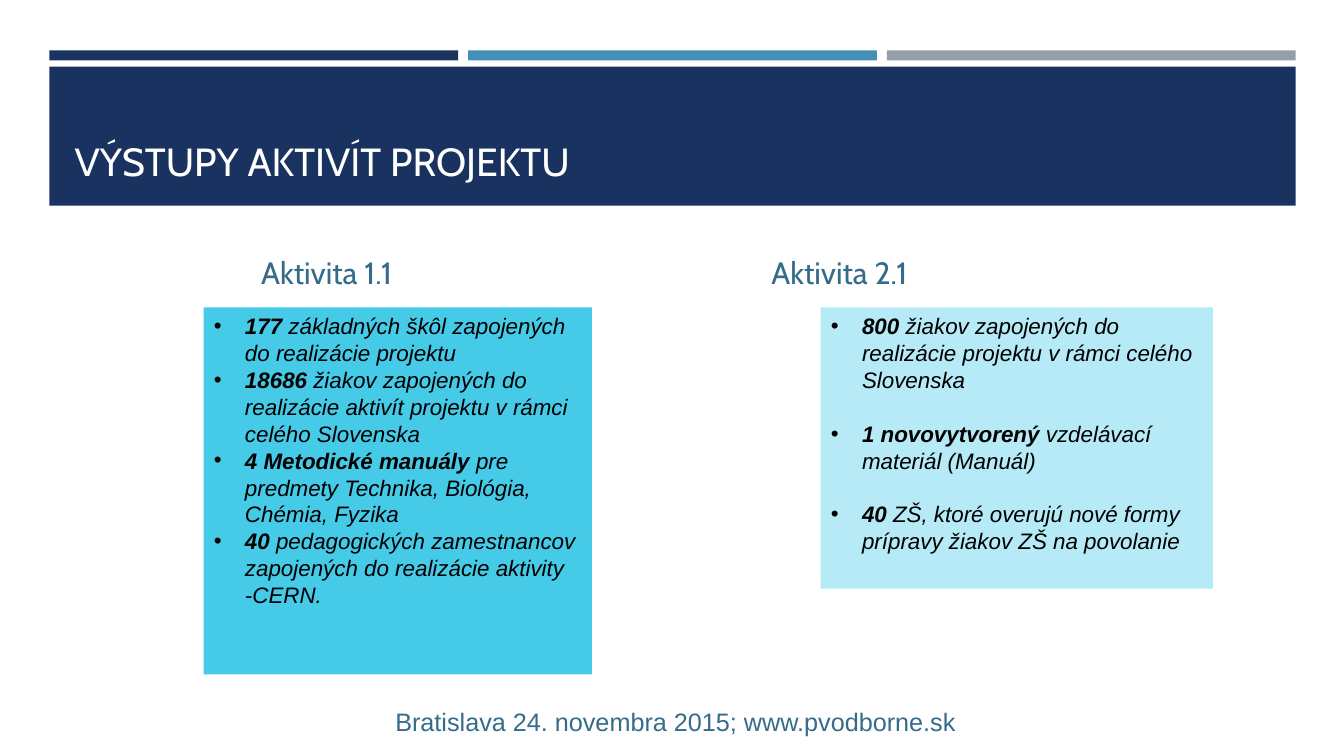
from pptx import Presentation
from pptx.util import Inches, Pt
from pptx.dml.color import RGBColor
from pptx.enum import shapes, text
from lxml import etree

# Content
TITLE = "VÝSTUPY AKTIVÍT PROJEKTU"
FOOTER = "Bratislava 24. novembra 2015; www.pvodborne.sk"
NAVY = RGBColor(0x1A, 0x32, 0x60)
BLUE = RGBColor(0x45, 0x90, 0xB8)
GREY = RGBColor(0x96, 0x9F, 0xA7)
TEAL = RGBColor(0x34, 0x6C, 0x8A)
CYAN = RGBColor(0x45, 0xCB, 0xE8)
PALE = RGBColor(0xB5, 0xEA, 0xF6)
WHITE = RGBColor(0xFF, 0xFF, 0xFF)
BLACK = RGBColor(0, 0, 0)

# Each list item is a bold lead and the rest of the sentence
ACTIVITIES = [
    {"heading": "Aktivita 1.1", "heading_left": 2.49, "fill": CYAN,
     "box": (2.02, 3.05, 3.85, 3.64), "gap": 0,
     "items": [
         ("177", " základných škôl zapojených do realizácie projektu"),
         ("18686", " žiakov zapojených do realizácie aktivít projektu v rámci celého Slovenska"),
         ("4 Metodické manuály ", "pre predmety Technika, Biológia, Chémia, Fyzika"),
         ("40", " pedagogických zamestnancov zapojených do realizácie aktivity -CERN."),
     ]},
    {"heading": "Aktivita 2.1", "heading_left": 7.55, "fill": PALE,
     "box": (8.14, 3.05, 3.89, 2.79), "gap": 19.2,
     "items": [
         ("800 ", "žiakov zapojených do realizácie projektu v rámci celého Slovenska"),
         ("1 novovytvorený ", "vzdelávací materiál (Manuál)"),
         ("40", " ZŠ, ktoré overujú nové formy prípravy žiakov ZŠ na povolanie"),
     ]},
]

# Grid of the header
MARGIN, BAND_WIDTH, STRIPE_GAP = 0.49, 12.36, 0.1
STRIPE_COLOURS = [NAVY, BLUE, GREY]
STRIPE_WIDTH = (BAND_WIDTH - 2 * STRIPE_GAP) / 3

TITLE_FONT = {"name": "Cabin", "size": Pt(28), "bold": False}
HEADING_FONT = {"name": "Cabin", "size": Pt(22), "bold": False}
LIST_FONT = {"name": "Arial", "size": Pt(16), "italic": True}
FOOTER_FONT = {"name": "Arial", "size": Pt(18)}


def place(shape, left, top, width, height):
    shape.left, shape.top = Inches(left), Inches(top)
    shape.width, shape.height = Inches(width), Inches(height)


def set_frame(shape, anchor):
    frame = shape.text_frame
    settings = {"word_wrap": True, "auto_size": text.MSO_AUTO_SIZE.NONE,
                "vertical_anchor": anchor}
    for name, value in settings.items():
        setattr(frame, name, value)
    return frame


def add_run(paragraph, words, font, colour):
    run = paragraph.add_run()
    run.text = words
    for name, value in font.items():
        setattr(run.font, name, value)
    run.font.color.rgb = colour


def add_bullet(paragraph):
    properties = paragraph._p.get_or_add_pPr()
    properties.set("marL", str(Inches(0.31)))
    properties.set("indent", str(-Inches(0.31)))
    namespace = "{http://schemas.openxmlformats.org/drawingml/2006/main}"
    etree.SubElement(properties, namespace + "buFont", typeface="Arial")
    etree.SubElement(properties, namespace + "buChar", char="•")


presentation = Presentation()
presentation.slide_width, presentation.slide_height = Inches(13.33), Inches(7.5)
slide = presentation.slides.add_slide(presentation.slide_layouts.get_by_name("Comparison"))
title, *body = slide.placeholders

# Header band and stripes, behind the placeholders
header = [(MARGIN + i * (STRIPE_WIDTH + STRIPE_GAP), 0.5, STRIPE_WIDTH, 0.1, colour)
          for i, colour in enumerate(STRIPE_COLOURS)]
header.append((MARGIN, 0.66, BAND_WIDTH, 1.38, NAVY))
for *box, colour in header:
    bar = slide.shapes.add_shape(shapes.MSO_SHAPE.RECTANGLE, *map(Inches, box))
    bar.shadow.inherit = False
    bar.fill.solid()
    bar.fill.fore_color.rgb = colour
    bar.line.fill.background()
    title._element.addprevious(bar._element)

# Title
place(title, 0.64, 0.8, 12.06, 1.08)
paragraph = set_frame(title, text.MSO_ANCHOR.BOTTOM).paragraphs[0]
paragraph.alignment = text.PP_ALIGN.LEFT
add_run(paragraph, TITLE, TITLE_FONT, WHITE)

# Activities: a heading and a filled list each
for activity, heading, panel in zip(ACTIVITIES, body[::2], body[1::2]):
    place(heading, activity["heading_left"], 2.29, 3, 0.64)
    paragraph = set_frame(heading, text.MSO_ANCHOR.BOTTOM).paragraphs[0]
    paragraph.space_after = Pt(6)
    add_run(paragraph, activity["heading"], HEADING_FONT, TEAL)

    place(panel, *activity["box"])
    panel.fill.solid()
    panel.fill.fore_color.rgb = activity["fill"]
    frame = set_frame(panel, text.MSO_ANCHOR.TOP)
    for i, (lead, rest) in enumerate(activity["items"]):
        paragraph = frame.add_paragraph() if i else frame.paragraphs[0]
        paragraph.space_before = Pt(activity["gap"] if i else 0)
        add_bullet(paragraph)
        add_run(paragraph, lead, {**LIST_FONT, "bold": True}, BLACK)
        add_run(paragraph, rest, {**LIST_FONT, "bold": False}, BLACK)

# Footer line
footer = slide.shapes.add_textbox(*map(Inches, (0.67, 6.96, 12.06, 0.5)))
paragraph = set_frame(footer, text.MSO_ANCHOR.TOP).paragraphs[0]
paragraph.alignment = text.PP_ALIGN.CENTER
add_run(paragraph, FOOTER, FOOTER_FONT, TEAL)

presentation.save("out.pptx")
